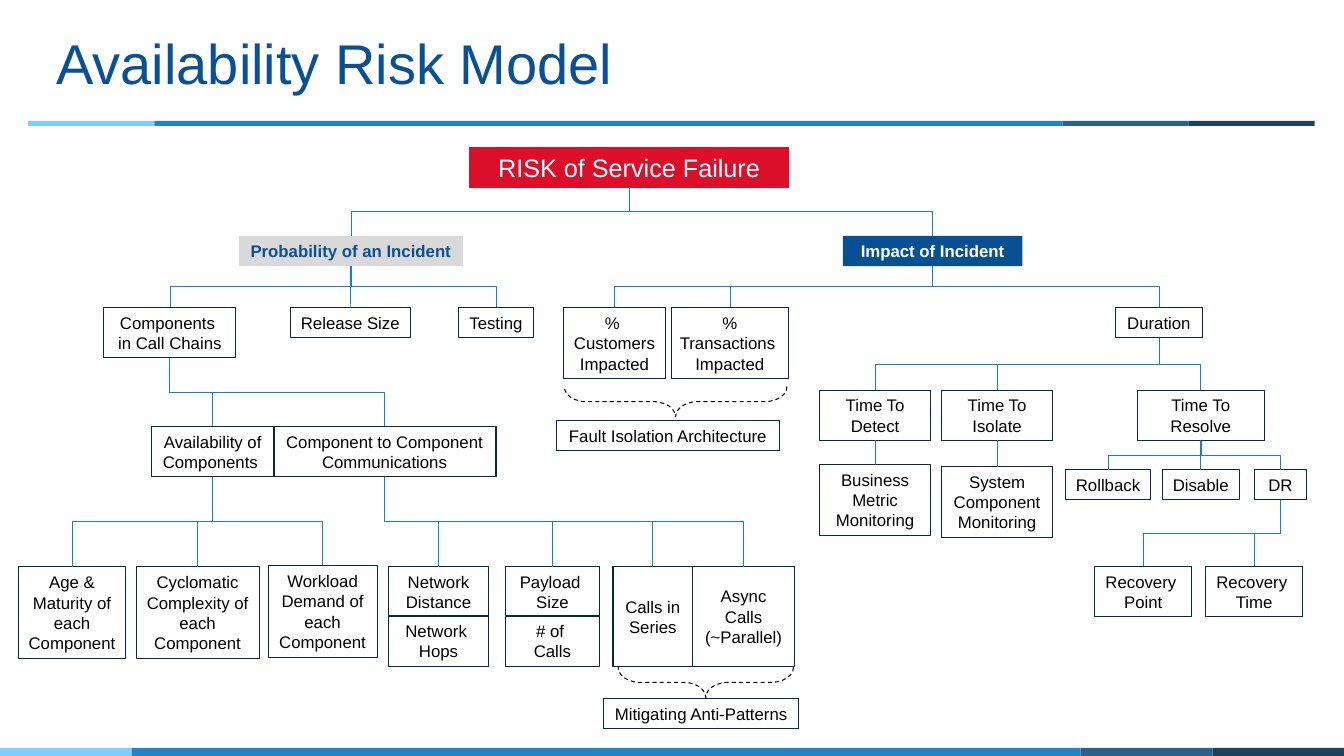
import lxml.etree
import pptx
import pptx.dml.color
import pptx.enum.dml
import pptx.enum.shapes
import pptx.enum.text
import pptx.oxml.ns
import pptx.util


class Theme:
    font = "Arial"
    title_size, root_size, box_size = 40, 18, 12
    title = "0A5193"
    text = "000000"
    outline = "042849"
    link = "1581C9"
    bands = ["7ECEFD", "2185C5", "2C618B", "1D405D"]
    # label: fill, outline, text, size, bold
    special = {
        "RISK of Service Failure": ("DB0F29", "DB0F29", "FFFFFF", root_size, False),
        "Probability of an Incident": ("D9D9D9", None, title, box_size, True),
        "Impact of Incident": ("095092", None, "FFFFFF", box_size, True),
        "Mitigating Anti-Patterns": ("FFFFFF", outline, text, box_size, False),
    }
    plain = (None, outline, text, box_size, False)


def rgb(value):
    return pptx.dml.color.RGBColor.from_string(value)


def add_block(kind, left, top, width, height, fill=None, line=None):
    """Place a shape, measured in grid cells of a tenth of an inch."""
    block = page.shapes.add_shape(kind, *(round(cell * n) for n in (left, top, width, height)))
    block.shadow.inherit = False
    if fill:
        block.fill.solid()
        block.fill.fore_color.rgb = rgb(fill)
    else:
        block.fill.background()
    if line:
        block.line.color.rgb = rgb(line)
        block.line.width = pptx.util.Pt(0.75)
    else:
        block.line.fill.background()
    return block


cell = pptx.util.Inches(0.1)
columns, rows = 133.3, 75
shape_kinds = pptx.enum.shapes.MSO_SHAPE
middle = pptx.enum.text.MSO_ANCHOR.MIDDLE
alignment = pptx.enum.text.PP_ALIGN

deck = pptx.Presentation()
deck.slide_width, deck.slide_height = round(cell * columns), cell * rows
page = deck.slides.add_slide(deck.slide_layouts[5])

# Title
title = page.shapes.title
title.left, title.top, title.width, title.height = (round(cell * n) for n in (4.6, 0.5, 115, 12.2))
title.text_frame.text = "Availability Risk Model"
title.text_frame.auto_size = pptx.enum.text.MSO_AUTO_SIZE.NONE
title.text_frame.vertical_anchor = middle
para = title.text_frame.paragraphs[0]
para.alignment = alignment.LEFT
para.line_spacing = 0.9
para.font.name = Theme.font
para.font.size = pptx.util.Pt(Theme.title_size)
para.font.color.rgb = rgb(Theme.title)

# Coloured bands under the title and along the foot
for left, top, width, height in [(2.8, 12, 127.6, 0.5), (0, 74.2, columns, 0.9)]:
    for share, colour in zip([0.098, 0.706, 0.098, 0.098], Theme.bands):
        add_block(shape_kinds.RECTANGLE, left, top, width * share, height, fill=colour)
        left += width * share

# Tiers of the tree: top, height, then label, left, width and parent
risk = "RISK of Service Failure"
probability = "Probability of an Incident"
impact = "Impact of Incident"
chains = "Components \vin Call Chains"
availability = "Availability of Components "
communications = "Component to Component Communications"
detect, isolate, resolve = "Time To Detect", "Time To Isolate", "Time To Resolve"
tiers = [
    (14.6, 4, [(risk, 46.6, 31.6, None)]),
    (23.4, 3, [(probability, 23.7, 22.2, risk), (impact, 83.6, 17.8, risk)]),
    (30.5, 3, [("Release Size", 28.8, 11.9, probability),
               ("Testing", 45.5, 7.4, probability),
               ("Duration", 110.6, 8.7, impact)]),
    (30.5, 5, [(chains, 10.3, 13.1, probability)]),
    (30.5, 7.1, [("% \vCustomers\nImpacted", 55.9, 10.1, impact),
                 ("%\vTransactions \nImpacted", 66.6, 11.6, impact)]),
    (38.7, 5, [(detect, 81.3, 11, "Duration"), (isolate, 93.4, 11, "Duration"),
               (resolve, 112.8, 12.6, "Duration")]),
    (41.7, 3, [("Fault Isolation Architecture", 55.2, 22.1, None)]),
    (42.3, 5, [(availability, 15, 12.2, chains), (communications, 27.1, 22.1, chains)]),
    (46.1, 7, [("Business Metric Monitoring", 81.3, 11, detect)]),
    (46.3, 7, [("System Component Monitoring", 93.4, 11, isolate)]),
    (46.6, 3, [("Rollback", 105.7, 8.4, resolve), ("Disable", 115.3, 7.6, resolve),
               ("DR", 124.4, 5.2, resolve)]),
    (56.2, 9.1, [("Age & Maturity of each Component", 1.8, 10.7, availability),
                 ("Cyclomatic Complexity of each Component", 13.5, 12.2, availability)]),
    (56.1, 9.1, [("Workload Demand of each Component", 26.6, 10.8, availability)]),
    (56.2, 5, [("Network Distance", 38.5, 10, communications),
               ("Payload \vSize", 50.1, 9.4, communications),
               ("Recovery \vPoint", 108.6, 9.6, "DR"),
               ("Recovery \vTime", 119.6, 9.6, "DR")]),
    (56.2, 9.9, [("Calls in Series", 60.8, 7.9, communications),
                 ("Async Calls (~Parallel)", 68.7, 10.1, communications)]),
    (61.1, 5, [("Network \vHops", 38.5, 10, None), ("# of \vCalls", 50.1, 9.4, None)]),
    (69.3, 3, [("Mitigating Anti-Patterns", 59.9, 19.3, None)]),
]

# Boxes
boxes, links = {}, []
for top, height, members in tiers:
    for label, left, width, parent in members:
        fill, line, text_colour, size, bold = Theme.special.get(label, Theme.plain)
        box = add_block(shape_kinds.RECTANGLE, left, top, width, height, fill, line)
        box.text_frame.text = label
        box.text_frame.vertical_anchor = middle
        # Single lines and labels with set breaks stay unwrapped
        box.text_frame.word_wrap = height > 3 and "\v" not in label
        for para in box.text_frame.paragraphs:
            para.alignment = alignment.CENTER
            para.font.name = Theme.font
            para.font.size = pptx.util.Pt(size)
            para.font.bold = bold
            para.font.color.rgb = rgb(text_colour)
        boxes[label] = box
        if parent:
            links.append((parent, label))

# Connectors, from the foot of each parent to the head of its child
connector_kinds = pptx.enum.shapes.MSO_CONNECTOR
for parent, child in links:
    centres = [boxes[label].left + boxes[label].width // 2 for label in (parent, child)]
    straight = abs(centres[1] - centres[0]) < cell * 0.2
    kind = connector_kinds.STRAIGHT if straight else connector_kinds.ELBOW
    link = page.shapes.add_connector(kind, 0, 0, 0, 0)
    link.begin_connect(boxes[parent], 2)
    link.end_connect(boxes[child], 0)
    link.line.color.rgb = rgb(Theme.link)
    link.line.width = pptx.util.Pt(0.5)
    properties = link.element.spPr
    lxml.etree.SubElement(properties, pptx.oxml.ns.qn("a:effectLst"))
    if not straight:
        # Turn the elbow a quarter so that it leaves and arrives vertically
        run, drop = link.end_x - link.begin_x, link.end_y - link.begin_y
        middle_x, middle_y = link.begin_x + run // 2, link.begin_y + drop // 2
        link.left, link.top = middle_x - drop // 2, middle_y - abs(run) // 2
        link.width, link.height = drop, abs(run)
        frame = properties.find(pptx.oxml.ns.qn("a:xfrm"))
        frame.set("rot", str((90 if run < 0 else 270) * 60000))
        frame.set("flipH", "0" if run < 0 else "1")

# Dashed braces above the two mitigation labels
for left, top, length in [(65.5, 28.8, 22.1), (68.5, 59, 17.4)]:
    brace = add_block(shape_kinds.RIGHT_BRACE, left, top, 3, length, line=Theme.text)
    brace.rotation = 90
    brace.adjustments[0], brace.adjustments[1] = 0.73, 0.5
    brace.line.dash_style = pptx.enum.dml.MSO_LINE.DASH

deck.save("out.pptx")
